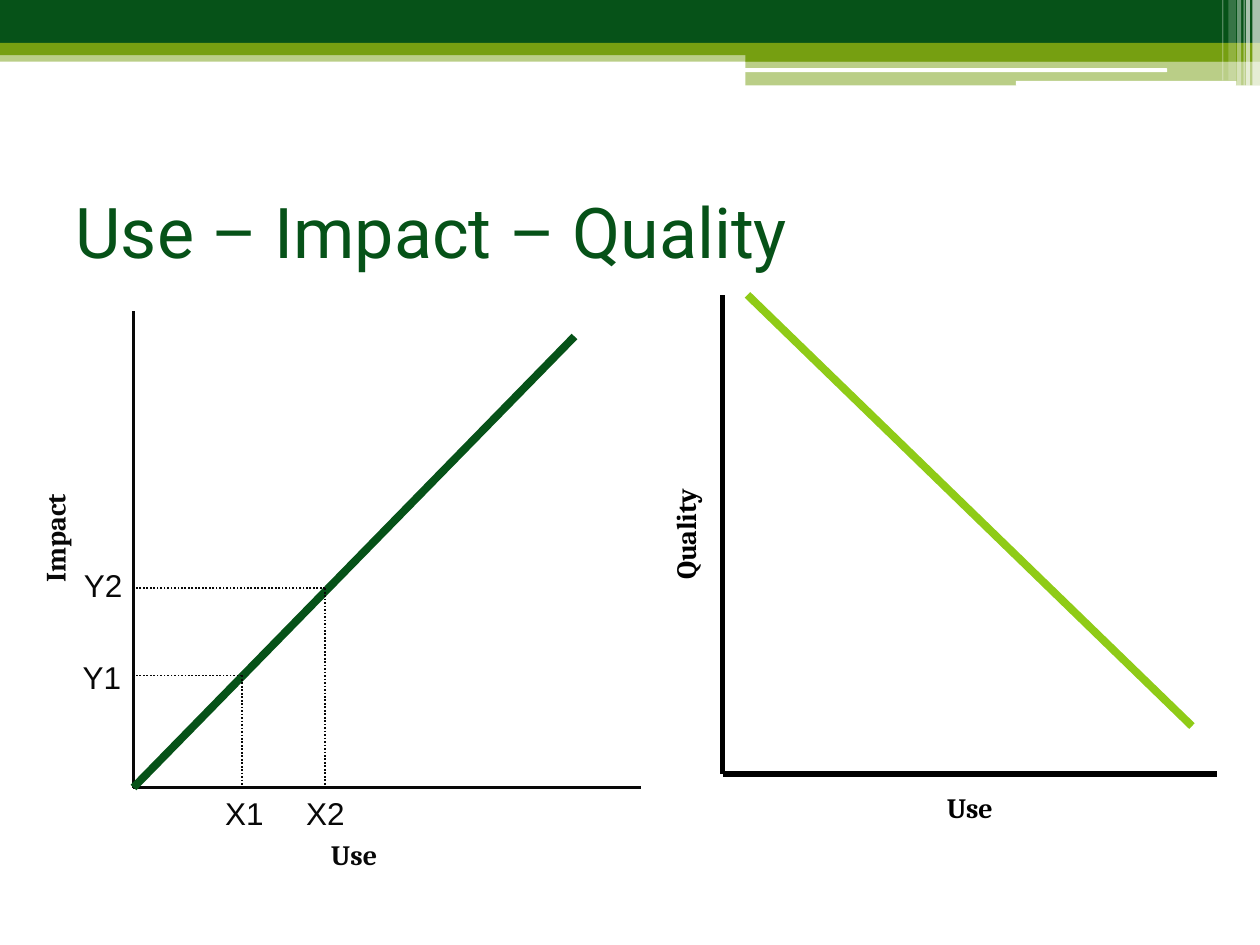
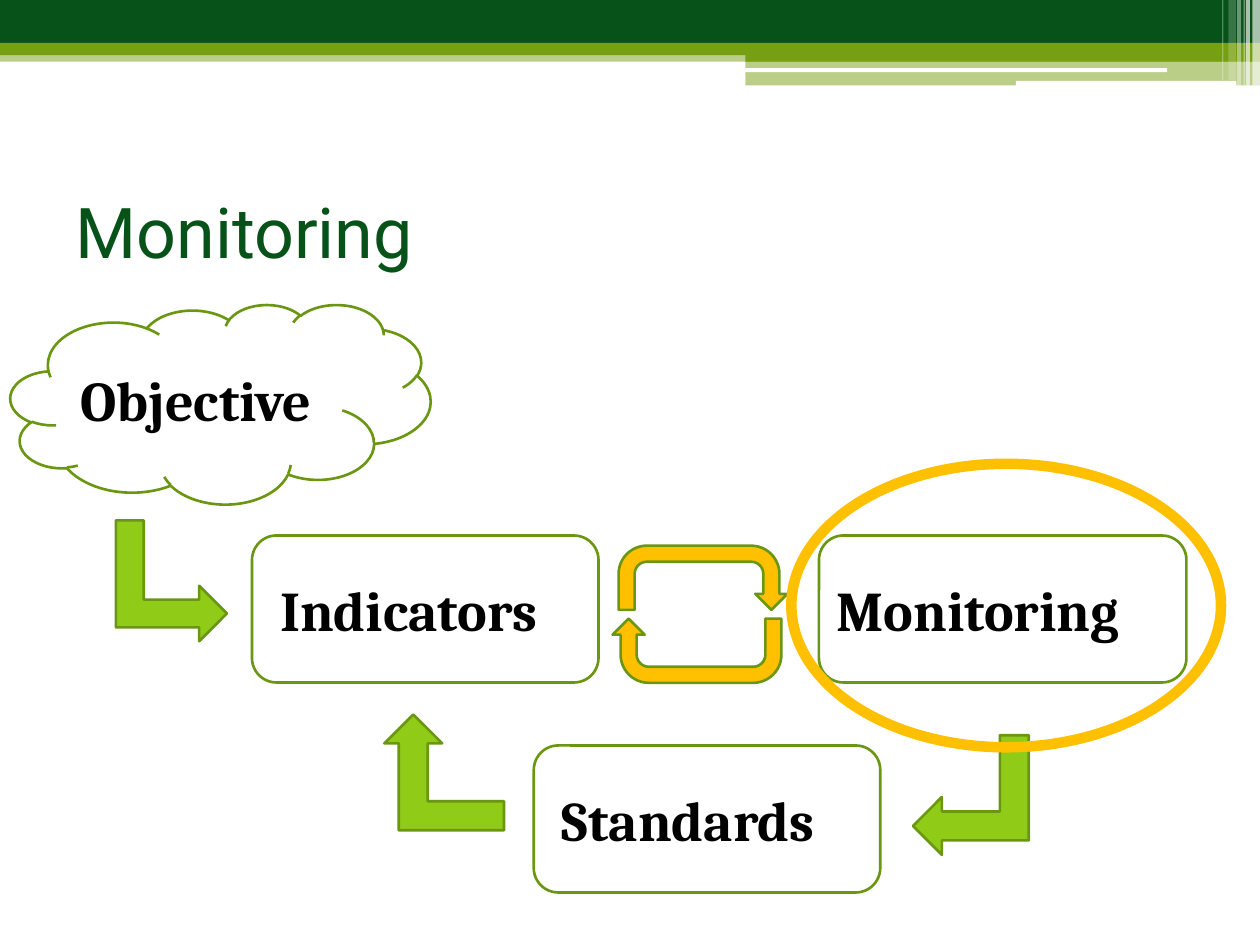
from dataclasses import dataclass
from typing import Any, Optional

from lxml.etree import SubElement
from pptx import Presentation
from pptx.chart.data import CategoryChartData
from pptx.dml.color import RGBColor
from pptx.enum.chart import XL_CHART_TYPE, XL_MARKER_STYLE, XL_TICK_LABEL_POSITION, XL_TICK_MARK
from pptx.enum.dml import MSO_LINE
from pptx.enum.shapes import MSO_CONNECTOR, MSO_SHAPE
from pptx.enum.text import MSO_ANCHOR, PP_ALIGN
from pptx.oxml import parse_xml
from pptx.oxml.ns import nsdecls, qn
from pptx.util import Pt

COLORS = {
    "dark": "065218", "olive": "769F11", "white": "FFFFFF", "lime": "8FCB17",
    "edge": "6A9611", "gold": "FFC000", "ink": "080808", "black": "000000",
}


@dataclass
class Form:
    """A preset shape with its frame, paint and turn."""
    kind: MSO_SHAPE
    left: float
    top: float
    width: float
    height: float
    fill: Optional[str] = None
    line: Optional[str] = None
    weight: float = 1.5
    alpha: int = 100
    turn: int = 0
    flip: bool = False
    adjust: tuple[float, ...] = ()


@dataclass
class Stroke:
    """A straight line between two points."""
    start: tuple[float, float]
    end: tuple[float, float]
    color: str = "ink"
    weight: float = 2.25
    dotted: bool = False


@dataclass
class Label:
    """A text box with one run."""
    text: str
    left: float
    top: float
    width: float
    height: float
    align: PP_ALIGN = PP_ALIGN.CENTER
    size: int = 18
    font: str = "Arial"
    bold: bool = False
    turn: int = 0


@dataclass
class Step:
    """A named stage with a label area inside an outline."""
    text: str
    left: float
    top: float
    width: float
    shift: float


BANDS = [
    Form(MSO_SHAPE.RECTANGLE, 0, 28.8, 720, 6.5, "olive", alpha=50),
    Form(MSO_SHAPE.RECTANGLE, 0, 0, 720, 24.5, "dark"),
    Form(MSO_SHAPE.RECTANGLE, 0, 24.5, 720, 7, "olive"),
    Form(MSO_SHAPE.RECTANGLE, 426, 28, 294, 7.2, "olive", flip=True),
    Form(MSO_SHAPE.RECTANGLE, 426, 34.6, 294, 14.2, "olive", alpha=50, flip=True),
    Form(MSO_SHAPE.ROUNDED_RECTANGLE, 425.5, 39, 241.5, 2.2, "white"),
    Form(MSO_SHAPE.ROUNDED_RECTANGLE, 580.5, 46.2, 126, 2.8, "white"),
] + [
    Form(MSO_SHAPE.RECTANGLE, left, 0, width, height, "white", alpha=alpha)
    for left, width, height, alpha in [
        (715.7, 4.3, 49, 65), (712, 2.2, 49, 65), (710.6, 0.7, 49, 60),
        (707, 2.2, 49, 40), (702, 4.3, 46, 20), (698.4, 0.7, 46, 30),
    ]
]

BASE, AXIS = 450, 76.3
MARKS = [(138.2, 386), (185.8, 336.2)]
STROKES = [
    Stroke((AXIS, 178), (AXIS, BASE)),
    Stroke((AXIS, BASE), (366.5, BASE)),
    Stroke((AXIS, BASE), (328.3, 192.3), "dark", 4.5),
] + [
    Stroke((x, y), end, weight=1, dotted=True)
    for x, y in MARKS for end in [(AXIS, y), (x, BASE)]
]
LABELS = [
    Label("X1", 117.4, BASE, 44.6, 25),
    Label("X2", 162, BASE, 48, 24),
    Label("Use", 163.4, 475.2, 77.8, 21.6, size=16, font="Cambria", bold=True),
    Label("Y2", 30.2, 319.7, 46.8, 30, PP_ALIGN.RIGHT),
    Label("Y1", 29.5, 372.2, 46.8, 24, PP_ALIGN.RIGHT),
    Label("Impact", -79.2, 295.2, 218.9, 24.5, size=16, font="Cambria", bold=True, turn=270),
]

CLOUD = Form(MSO_SHAPE.CLOUD, 6, 174, 240, 114, line="edge")
GOAL = Form(MSO_SHAPE.ROUNDED_RECTANGLE, 36, 198, 198, 60)
RING = Form(MSO_SHAPE.OVAL, 452.2, 265, 245.5, 162, line="gold", weight=6)
STEPS = [
    Step("Indicators", 150, 318, 198, 6),
    Step("Monitoring", 468, 318, 210, 0),
    Step("Standards", 311, 438, 198, 6),
]
BENDS = [
    Form(MSO_SHAPE.BENT_UP_ARROW, left, top, width, height, "lime", "edge", turn=turn, flip=flip)
    for left, top, width, height, turn, flip in [
        (63.4, 300.2, 69.1, 63.4, 90, False),
        (520.6, 421.2, 68.4, 66.2, 90, True),
        (219.6, 408.2, 68.4, 66.2, 180, True),
    ]
]
LOOPS = [
    Form(MSO_SHAPE.U_TURN_ARROW, left, top, 96.5, 36.7, "gold", "edge", turn=turn,
         adjust=(0.25, 0.25, 0.25, 0.44, 1))
    for left, top, turn in [(350, 353.5, 180), (353.5, 311.8, 0)]
]


def tint(name: str) -> RGBColor:
    """Return a palette colour."""
    return RGBColor.from_string(COLORS[name])


def write(para: Any, text: str, size: int, font: str, color: str, bold: bool = False) -> None:
    """Add one formatted run to a paragraph."""
    run = para.add_run()
    run.text = text
    run.font.size, run.font.name, run.font.bold = Pt(size), font, bold
    run.font.color.rgb = tint(color)


def draw(shapes: Any, form: Form) -> Any:
    """Draw a preset shape."""
    shape = shapes.add_shape(form.kind, Pt(form.left), Pt(form.top), Pt(form.width), Pt(form.height))
    shape.shadow.inherit = False
    shape.rotation = form.turn
    for place, value in enumerate(form.adjust):
        shape.adjustments[place] = value
    if form.flip:
        shape.element.find(".//" + qn("a:xfrm")).set("flipV", "1")
    if form.fill:
        shape.fill.solid()
        shape.fill.fore_color.rgb = tint(form.fill)
        if form.alpha < 100:
            paint = shape.element.find(".//" + qn("a:srgbClr"))
            SubElement(paint, qn("a:alpha")).set("val", str(form.alpha * 1000))
    else:
        shape.fill.background()
    if form.line:
        shape.line.color.rgb = tint(form.line)
        shape.line.width = Pt(form.weight)
    else:
        shape.line.fill.background()
    return shape


def link(shapes: Any, stroke: Stroke) -> None:
    """Draw a straight line."""
    ends = [Pt(value) for value in stroke.start + stroke.end]
    line = shapes.add_connector(MSO_CONNECTOR.STRAIGHT, *ends)
    line.line.color.rgb = tint(stroke.color)
    line.line.width = Pt(stroke.weight)
    if stroke.dotted:
        line.line.dash_style = MSO_LINE.ROUND_DOT
    SubElement(line.element.spPr, qn("a:effectLst"))


def tag(shapes: Any, label: Label) -> None:
    """Draw a text box."""
    box = shapes.add_textbox(Pt(label.left), Pt(label.top), Pt(label.width), Pt(label.height))
    box.rotation = label.turn
    box.text_frame.word_wrap = True
    para = box.text_frame.paragraphs[0]
    para.alignment, para.space_after = label.align, Pt(10)
    write(para, label.text, label.size, label.font, "ink", label.bold)


def name(shapes: Any, form: Form, text: str) -> None:
    """Draw a shape holding a stage name."""
    frame = draw(shapes, form).text_frame
    frame.word_wrap, frame.vertical_anchor = True, MSO_ANCHOR.MIDDLE
    frame.paragraphs[0].alignment = PP_ALIGN.LEFT
    write(frame.paragraphs[0], text, 32, "Cambria", "black", True)


def stage(shapes: Any, step: Step) -> None:
    """Draw a stage name and its outline."""
    kind = MSO_SHAPE.ROUNDED_RECTANGLE
    name(shapes, Form(kind, step.left, step.top, step.width, 60, "white"), step.text)
    draw(shapes, Form(kind, step.left - step.shift, step.top - 12, step.width, 84, line="edge"))


def start(deck: Any, layout: Any, text: str) -> Any:
    """Add a slide with its title."""
    slide = deck.slides.add_slide(layout)
    title = slide.shapes.title
    title.left, title.top, title.width, title.height = Pt(36), Pt(90), Pt(648), Pt(84)
    frame = title.text_frame
    frame.word_wrap, frame.vertical_anchor = True, MSO_ANCHOR.MIDDLE
    frame.paragraphs[0].alignment = PP_ALIGN.LEFT
    write(frame.paragraphs[0], text, 40, "Roboto", "dark")
    return slide


def style(axis: Any, text: str) -> None:
    """Give an axis a title and a plain black line."""
    axis.has_major_gridlines = False
    axis.major_tick_mark = axis.minor_tick_mark = XL_TICK_MARK.NONE
    axis.tick_label_position = XL_TICK_LABEL_POSITION.NONE
    axis.format.line.color.rgb = tint("black")
    axis.format.line.width = Pt(3)
    write(axis.axis_title.text_frame.paragraphs[0], text, 16, "Cambria", "black", True)


def plot(shapes: Any) -> None:
    """Draw the chart of quality against use."""
    data = CategoryChartData()
    data.categories = ["1", "2", "3", "4"]
    data.add_series("Series 1", [100, None, 80, None, 60, None, 40, 30, None, 10])
    frame = shapes.add_chart(XL_CHART_TYPE.LINE, Pt(366), Pt(162), Pt(336), Pt(326), data)
    chart = frame.chart
    chart.has_legend = chart.has_title = False
    chart.font.size, chart.font.name = Pt(18), "Cambria"
    chart.font.color.rgb = tint("black")
    chart.plots[0].vary_by_categories = False
    series = chart.plots[0].series[0]
    series.smooth = False
    series.marker.style = XL_MARKER_STYLE.NONE
    series.format.line.color.rgb = tint("lime")
    style(chart.category_axis, "Use")
    scale = chart.value_axis
    style(scale, "Quality")
    scale.minimum_scale, scale.maximum_scale, scale.major_unit = 0, 100, 20
    scale.axis_title.text_frame.word_wrap = True
    scale.axis_title.format.fill.background()
    body = chart.element.find(".//" + qn("c:valAx")).find(".//" + qn("a:bodyPr"))
    body.set("rot", "-5400000")
    body.set("vert", "horz")
    chart.element.find(".//" + qn("c:cat")).addprevious(parse_xml(
        f'<c:trendline {nsdecls("c", "a")}><c:spPr><a:ln w="{Pt(4.5)}"><a:solidFill>'
        f'<a:srgbClr val="{COLORS["lime"]}"/></a:solidFill></a:ln></c:spPr>'
        '<c:trendlineType val="linear"/><c:dispRSqr val="0"/><c:dispEq val="0"/></c:trendline>'))
    area = chart.element.find(".//" + qn("c:plotArea"))
    for old in area.findall(qn("c:layout")):
        area.remove(old)
    spots = "".join(f'<c:{key} val="{value}"/>' for key, value in [
        ("layoutTarget", "inner"), ("xMode", "edge"), ("yMode", "edge"),
        ("x", 0.14), ("y", 0.02), ("w", 0.84), ("h", 0.84)])
    area.insert(0, parse_xml(
        f'<c:layout {nsdecls("c")}><c:manualLayout>{spots}</c:manualLayout></c:layout>'))


def main() -> None:
    """Build and save the deck."""
    deck = Presentation()
    deck.slide_width, deck.slide_height = Pt(720), Pt(540)
    layout = deck.slide_layouts[5]

    graph = start(deck, layout, "Use – Impact – Quality")
    for band in BANDS:
        layout.shapes.element.append(draw(graph.shapes, band).element)
    plot(graph.shapes)
    group = graph.shapes.add_group_shape().shapes
    for stroke in STROKES:
        link(group, stroke)
    for label in LABELS:
        tag(group, label)

    cycle = start(deck, layout, "Monitoring").shapes
    draw(cycle, CLOUD)
    for step in STEPS:
        stage(cycle, step)
    for bend in BENDS:
        draw(cycle, bend)
    pair = cycle.add_group_shape().shapes
    for loop in LOOPS:
        draw(pair, loop)
    name(cycle, GOAL, "Objective")
    draw(cycle, RING)
    deck.save("out.pptx")


if __name__ == "__main__":
    main()
